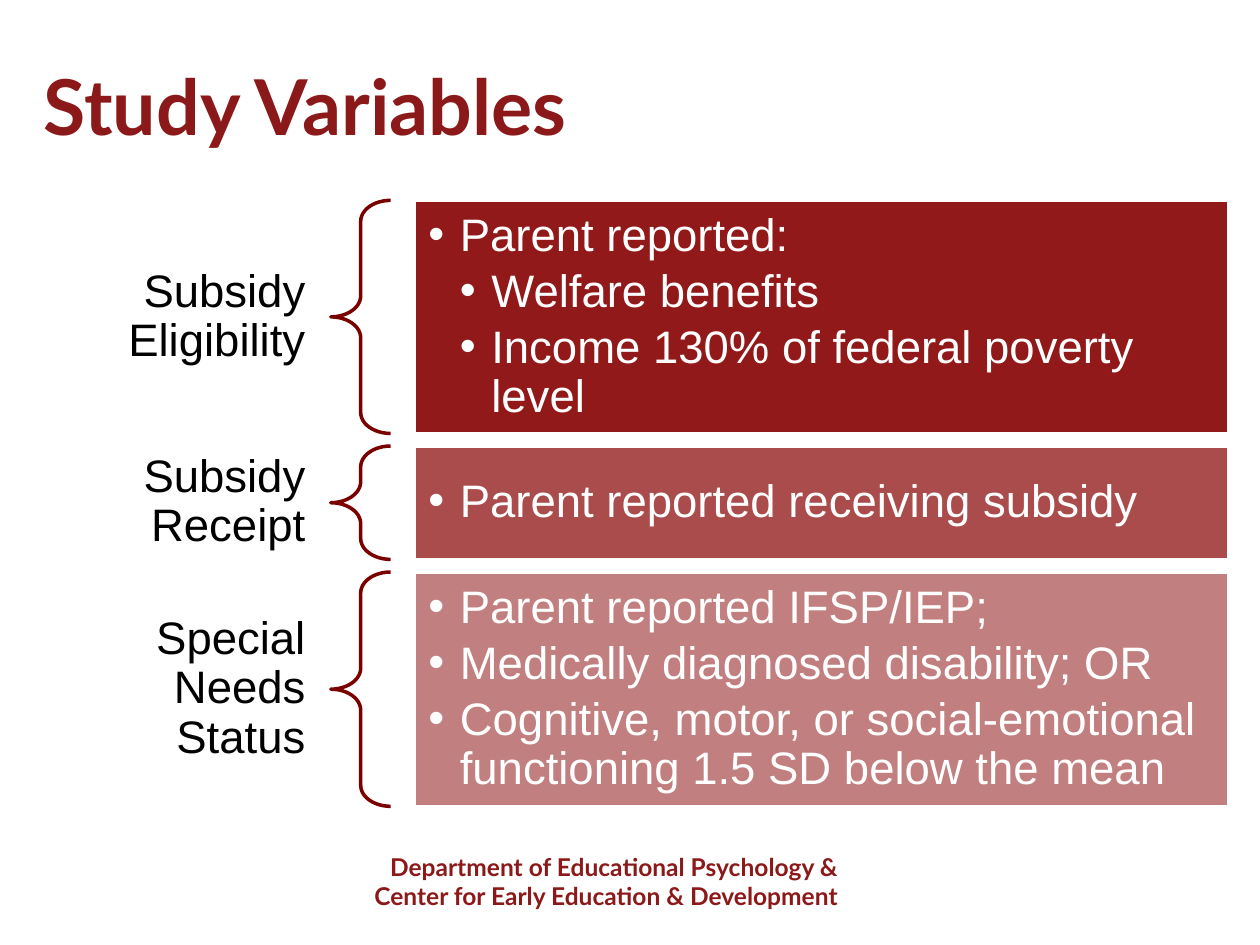
import pptx
import pptx.util
import pptx.dml.color
import pptx.enum.shapes
import pptx.enum.text
import pptx.oxml.ns
from lxml import etree

Inches, Pt = pptx.util.Inches, pptx.util.Pt
RGBColor = pptx.dml.color.RGBColor
SHAPE = pptx.enum.shapes.MSO_SHAPE
ALIGN = pptx.enum.text.PP_ALIGN
MIDDLE = pptx.enum.text.MSO_ANCHOR.MIDDLE
qn = pptx.oxml.ns.qn

MAROON = RGBColor(0x8C, 0x19, 0x19)
BLOCK_RED = RGBColor(0x86, 0x00, 0x00)
BRACE_RED = RGBColor(0x7A, 0x00, 0x00)
BLACK = RGBColor(0, 0, 0)
WHITE = RGBColor(0xFF, 0xFF, 0xFF)

SLIDE_W, SLIDE_H = 10, 7.5
MARGIN = SLIDE_W / 40
ROW_GAP = 0.1
# Columns as shares of the diagram's width: (start, width)
DIAGRAM_W = SLIDE_W - 2 * MARGIN
LABEL_COL, BRACE_COL, BLOCK_COL = (0, 0.25), (0.25, 0.05), (0.32, 0.68)

# Label, row height, opacity in percent, (level, text) points
VARIABLES = [
    ("Subsidy Eligibility", 1.85, 90, [
        (1, "Parent reported:"),
        (2, "Welfare benefits"),
        (2, "Income 130% of federal poverty level")]),
    ("Subsidy Receipt", 0.9, 70, [
        (1, "Parent reported receiving subsidy")]),
    ("Special Needs Status", 1.86, 50, [
        (1, "Parent reported IFSP/IEP;"),
        (1, "Medically diagnosed disability; OR"),
        (1, "Cognitive, motor, or social-emotional functioning 1.5 SD below the mean")]),
]


def set_frame(frame, inset_x, inset_y, anchor=MIDDLE):
    frame.word_wrap = True
    frame.vertical_anchor = anchor
    frame.margin_left = frame.margin_right = Inches(inset_x)
    frame.margin_top = frame.margin_bottom = Inches(inset_y)


def style(paragraph, font, size, color, bold=False, align=ALIGN.LEFT):
    paragraph.alignment = align
    for run in paragraph.runs:
        run.font.name, run.font.size = font, Pt(size)
        run.font.bold, run.font.color.rgb = bold, color


def add_text(slide, box, text, inset, font, size, color, bold=False,
             align=ALIGN.LEFT, anchor=MIDDLE):
    textbox = slide.shapes.add_textbox(*map(Inches, box))
    frame = textbox.text_frame
    set_frame(frame, *inset, anchor)
    frame.text = text
    for paragraph in frame.paragraphs:
        style(paragraph, font, size, color, bold, align)
    return frame


def add_bullet(paragraph, level):
    paragraph.level = level
    properties = paragraph._p.get_or_add_pPr()
    properties.set("marL", str(Inches(0.25 * level)))
    properties.set("indent", str(-Inches(0.25)))
    etree.SubElement(properties, qn("a:buFont")).set("typeface", "Arial")
    etree.SubElement(properties, qn("a:buChar")).set("char", "•")


def add_block(slide, box, opacity, points):
    block = slide.shapes.add_shape(SHAPE.RECTANGLE, *map(Inches, box))
    block.shadow.inherit = False
    block.fill.solid()
    block.fill.fore_color.rgb = BLOCK_RED
    color = block._element.spPr.find(".//" + qn("a:srgbClr"))
    etree.SubElement(color, qn("a:alpha")).set("val", str(opacity * 1000))
    block.line.color.rgb = WHITE
    block.line.width = Pt(2)

    frame = block.text_frame
    set_frame(frame, 0.11, 0.11)
    frame.text = "\n".join(text for _, text in points)
    for paragraph, (level, _) in zip(frame.paragraphs, points):
        add_bullet(paragraph, level)
        paragraph.line_spacing = 0.9
        paragraph.space_after = Pt(4)
        style(paragraph, "Arial", 26, WHITE)


def add_brace(slide, box):
    brace = slide.shapes.add_shape(SHAPE.LEFT_BRACE, *map(Inches, box))
    brace.shadow.inherit = False
    brace.adjustments[0], brace.adjustments[1] = 0.35, 0.5
    brace.fill.background()
    brace.line.color.rgb = BRACE_RED
    brace.line.width = Pt(2)


def add_variable(slide, box, label, opacity, points):
    """One row: label, brace and coloured block."""
    left, top, width, height = box

    def cell(column):
        start, share = column
        return left + start * width, top, share * width, height

    frame = add_text(slide, cell(LABEL_COL), label, (0.2, 0.07), "Arial", 26,
                     BLACK, align=ALIGN.RIGHT)
    frame.paragraphs[0].line_spacing = 0.9
    add_brace(slide, cell(BRACE_COL))
    add_block(slide, cell(BLOCK_COL), opacity, points)


def add_diagram(slide, left, top, width):
    for label, height, opacity, points in VARIABLES:
        add_variable(slide, (left, top, width, height), label, opacity, points)
        top += height + ROW_GAP


def main():
    deck = pptx.Presentation()
    deck.slide_width, deck.slide_height = Inches(SLIDE_W), Inches(SLIDE_H)
    slide = deck.slides.add_slide(deck.slide_layouts[6])

    # Title
    add_text(slide, (MARGIN, 0.42, DIAGRAM_W, 0.83), "Study Variables",
             (0.1, 0.05), "Lato", 44, MAROON, bold=True)
    # Variables and how each was measured
    add_diagram(slide, MARGIN, 1.59, DIAGRAM_W)
    # Footer
    add_text(slide, (1.75, 6.71, SLIDE_W / 2, 0.57),
             "Department of Educational Psychology &\n"
             "Center for Early Education & Development",
             (0.1, 0.05), "Lato", 14, MAROON, bold=True, align=ALIGN.RIGHT,
             anchor=pptx.enum.text.MSO_ANCHOR.TOP)

    deck.save("out.pptx")


if __name__ == "__main__":
    main()
